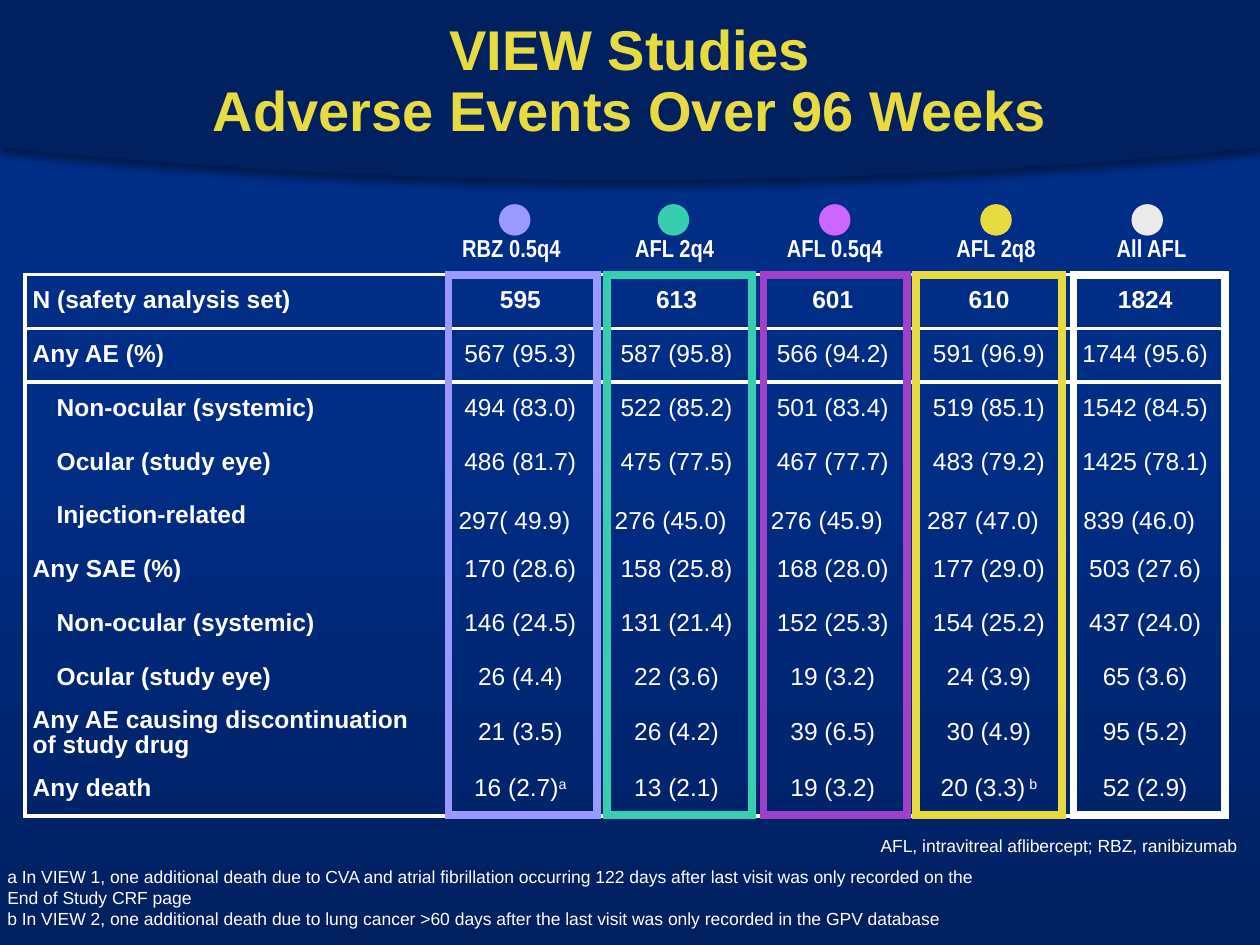
"""Build the VIEW studies adverse-event slide."""
from copy import deepcopy
from dataclasses import dataclass
from lxml import etree
from pptx import Presentation
from pptx import util as u
from pptx.dml.color import RGBColor
from pptx.enum import shapes, text
from pptx.oxml import parse_xml
from pptx.oxml.ns import nsdecls, qn


@dataclass(frozen=True)
class Theme:
    navy: str = "002060"
    blue: str = "002D86"
    white: str = "FFFFFF"
    yellow: str = "E7DB41"
    lilac: str = "9999FF"
    teal: str = "37CDB0"
    purple: str = "9E40C8"
    orchid: str = "CC66FF"
    pale: str = "EAEAEA"
    font: str = "Arial"
    narrow: str = "Arial Narrow"
    title: float = 32
    body: float = 14
    spacer: float = 24
    note: float = 10
    frame: float = 4.5
    border: float = 2.25


@dataclass(frozen=True)
class Arm:
    label: str
    label_left: float
    label_width: float
    dot_left: float
    dot_color: str
    frame_left: float
    frame_width: float
    frame_color: str


@dataclass(frozen=True)
class Row:
    label: str
    values: tuple
    indented: bool = False
    bold: bool = False
    spaced: bool = False


THEME = Theme()
TABLE_LEFT, TABLE_TOP, TABLE_HEIGHT = 0.2, 2.18, 4.3
LABEL_COLUMN, ARM_COLUMN, TALL_ROW = 3.31, 1.24, 0.46
TALL_INDEX = 8
NO_STYLE = "{2D5ABB26-0587-4C30-8999-92F81FD0307C}"

ARMS = (
    Arm("RBZ 0.5q4", 3.56, 1, 3.96, THEME.lilac, 3.56, 1.18, THEME.lilac),
    Arm("AFL 2q4", 4.94, 0.83, 5.22, THEME.teal, 4.82, 1.15, THEME.teal),
    Arm("AFL 0.5q4", 6.12, 1.01, 6.5, THEME.orchid, 6.06, 1.14, THEME.purple),
    Arm("AFL 2q8", 7.49, 0.83, 7.78, THEME.yellow, 7.27, 1.16, THEME.yellow),
    Arm("All AFL", 8.76, 0.76, 8.98, THEME.pale, 8.52, 1.2, THEME.white),
)
ROWS = (
    Row("N (safety analysis set)", ("595", "613", "601", "610", "1824"), bold=True),
    Row("Any AE (%)", ("567 (95.3)", "587 (95.8)", "566 (94.2)", "591 (96.9)", "1744 (95.6)")),
    Row("Non-ocular (systemic)",
        ("494 (83.0)", "522 (85.2)", "501 (83.4)", "519 (85.1)", "1542 (84.5)"), indented=True),
    Row("Ocular (study eye)",
        ("486 (81.7)", "475 (77.5)", "467 (77.7)", "483 (79.2)", "1425 (78.1)"), indented=True),
    Row("Injection-related",
        ("297( 49.9)", "276 (45.0)", "276 (45.9)", "287 (47.0)", "839 (46.0)"),
        indented=True, spaced=True),
    Row("Any SAE (%)", ("170 (28.6)", "158 (25.8)", "168 (28.0)", "177 (29.0)", "503 (27.6)")),
    Row("Non-ocular (systemic)",
        ("146 (24.5)", "131 (21.4)", "152 (25.3)", "154 (25.2)", "437 (24.0)"), indented=True),
    Row("Ocular (study eye)",
        ("26 (4.4)", "22 (3.6)", "19 (3.2)", "24 (3.9)", "65 (3.6)"), indented=True),
    Row("Any AE causing discontinuation\nof study drug",
        ("21 (3.5)", "26 (4.2)", "39 (6.5)", "30 (4.9)", "95 (5.2)")),
    Row("Any death", ("16 (2.7)^a", "13 (2.1)", "19 (3.2)", "20 (3.3)^ b", "52 (2.9)")),
)


def write(paragraph, content: str, *, size: float = THEME.body, color: str = THEME.white,
          font: str = THEME.font, bold: bool = False, align=text.PP_ALIGN.LEFT,
          spacing: float = 0.9, raised: bool = False) -> None:
    paragraph.alignment = align
    paragraph.line_spacing = spacing
    for index, line in enumerate(content.split("\n")):
        if index:
            paragraph.add_line_break()
            paragraph._p[-1].append(deepcopy(run._r.rPr))
        run = paragraph.add_run()
        run.text = line
        run.font.size, run.font.name, run.font.bold = u.Pt(size), font, bold
        run.font.color.rgb = RGBColor.from_string(color)
        if raised:
            run._r.rPr.set("baseline", "30000")


def add_box(slide, left: float, top: float, width: float, height: float, wrap: bool = False):
    frame = slide.shapes.add_textbox(*map(u.Inches, (left, top, width, height))).text_frame
    frame.word_wrap = wrap
    return frame


def add_band(slide) -> None:
    edge, depth, steps = 1.17, 0.26, 40
    curve = [(10 * i / steps, edge + depth * (1 - (2 * i / steps - 1) ** 2))
             for i in range(steps + 1)]
    builder = slide.shapes.build_freeform(0, 0)
    builder.add_line_segments([(u.Inches(x), u.Inches(y)) for x, y in curve + [(10, 0)]])
    band = builder.convert_to_shape()
    band.fill.solid()
    band.fill.fore_color.rgb = RGBColor.from_string(THEME.navy)
    band.line.fill.background()
    band._element.spPr.append(parse_xml(
        f'<a:effectLst {nsdecls("a")}><a:outerShdw blurRad="{u.Pt(4)}" dist="{u.Pt(3)}" '
        'dir="5400000" algn="t" rotWithShape="0"><a:srgbClr val="000000">'
        '<a:alpha val="40000"/></a:srgbClr></a:outerShdw></a:effectLst>'))
    slide.shapes._spTree.insert(2, band._element)


def add_borders(cell, sides: str) -> None:
    properties = cell._tc.get_or_add_tcPr()
    for index, side in enumerate(sides):
        properties.insert(index, parse_xml(
            f'<a:ln{side} {nsdecls("a")} w="{u.Pt(THEME.border)}"><a:solidFill>'
            f'<a:srgbClr val="{THEME.white}"/></a:solidFill></a:ln{side}>'))


def fill_cell(cell, row: Row, column: int) -> None:
    cell.fill.background()
    cell.vertical_anchor = text.MSO_ANCHOR.MIDDLE
    cell.margin_top = cell.margin_bottom = 0
    cell.margin_left = cell.margin_right = u.Inches(0 if column else 0.06)
    paragraph = cell.text_frame.paragraphs[0]
    if not column:
        write(paragraph, row.label, bold=True)
        if row.indented:
            paragraph._p.get_or_add_pPr().set("marL", str(u.Inches(0.19)))
        return
    value, _, mark = row.values[column - 1].partition("^")
    center = text.PP_ALIGN.CENTER
    write(paragraph, value, bold=row.bold, align=center)
    if mark:
        write(paragraph, mark, align=center, raised=True)
    if row.spaced:
        write(paragraph, " ", size=THEME.spacer, align=center)


def add_events_table(slide) -> None:
    width = LABEL_COLUMN + ARM_COLUMN * len(ARMS)
    table = slide.shapes.add_table(
        len(ROWS), len(ARMS) + 1,
        *map(u.Inches, (TABLE_LEFT, TABLE_TOP, width, TABLE_HEIGHT))).table
    table.first_row = table.horz_banding = False
    table._tbl.tblPr[0].text = NO_STYLE
    for index, column in enumerate(table.columns):
        column.width = u.Inches(ARM_COLUMN if index else LABEL_COLUMN)
    usual = (TABLE_HEIGHT - TALL_ROW) / (len(ROWS) - 1)
    for r, row in enumerate(ROWS):
        table.rows[r].height = u.Inches(TALL_ROW if r == TALL_INDEX else usual)
        for c in range(len(ARMS) + 1):
            cell = table.cell(r, c)
            fill_cell(cell, row, c)
            add_borders(cell, "L" * (c == 0) + "R" * (c == len(ARMS))
                        + "T" * (r < 2) + "B" * (r in (0, len(ROWS) - 1)))


def add_arm(slide, arm: Arm) -> None:
    frame = slide.shapes.add_shape(
        shapes.MSO_SHAPE.RECTANGLE,
        *map(u.Inches, (arm.frame_left, TABLE_TOP, arm.frame_width, 4.29)))
    frame.shadow.inherit = False
    frame.fill.background()
    frame.line.color.rgb = RGBColor.from_string(arm.frame_color)
    frame.line.width = u.Pt(THEME.frame)
    etree.SubElement(frame.line._get_or_add_ln(), qn("a:miter")).set("lim", "800000")
    label = add_box(slide, arm.label_left, 1.83, arm.label_width, 0.31)
    write(label.paragraphs[0], arm.label, font=THEME.narrow, bold=True,
          align=text.PP_ALIGN.CENTER)
    dot = slide.shapes.add_shape(
        shapes.MSO_SHAPE.OVAL, *map(u.Inches, (arm.dot_left, 1.62, 0.25, 0.25)))
    dot.shadow.inherit = False
    dot.fill.solid()
    dot.fill.fore_color.rgb = RGBColor.from_string(arm.dot_color)
    dot.line.fill.background()


def add_title(slide) -> None:
    title = slide.shapes.title
    title.left, title.top, title.width, title.height = map(u.Inches, (0.5, 0.29, 9, 0.9))
    title.text_frame.vertical_anchor = text.MSO_ANCHOR.BOTTOM
    title.text_frame.auto_size = text.MSO_AUTO_SIZE.NONE
    write(title.text_frame.paragraphs[0], "VIEW Studies\nAdverse Events Over 96 Weeks",
          size=THEME.title, color=THEME.yellow, bold=True, align=text.PP_ALIGN.CENTER)


def add_notes(slide) -> None:
    footnotes = add_box(slide, -0.04, 6.82, 9.39, 0.62, wrap=True)
    write(footnotes.paragraphs[0],
          "a In VIEW 1, one additional death due to CVA and atrial fibrillation occurring "
          "122 days after last visit was only recorded on the\nEnd of Study CRF page",
          size=THEME.note, spacing=1.0)
    write(footnotes.add_paragraph(),
          "b In VIEW 2, one additional death due to lung cancer >60 days after the last visit "
          "was only recorded in the GPV database", size=THEME.note, spacing=1.0)
    abbreviations = add_box(slide, 6.89, 6.58, 3.06, 0.27)
    write(abbreviations.paragraphs[0], "AFL, intravitreal aflibercept; RBZ, ranibizumab",
          size=THEME.note, spacing=1.0)


def main() -> None:
    deck = Presentation()
    deck.slide_width, deck.slide_height = u.Inches(10), u.Inches(7.5)
    slide = deck.slides.add_slide(deck.slide_layouts[5])
    backdrop = slide.background.fill
    backdrop.gradient()
    backdrop.gradient_angle = 90
    for stop, color, position in zip(backdrop.gradient_stops, (THEME.navy, THEME.blue), (0, 0.53)):
        stop.color.rgb, stop.position = RGBColor.from_string(color), position
    add_band(slide)
    add_title(slide)
    add_events_table(slide)
    for arm in ARMS:
        add_arm(slide, arm)
    add_notes(slide)
    deck.save("out.pptx")


if __name__ == "__main__":
    main()
